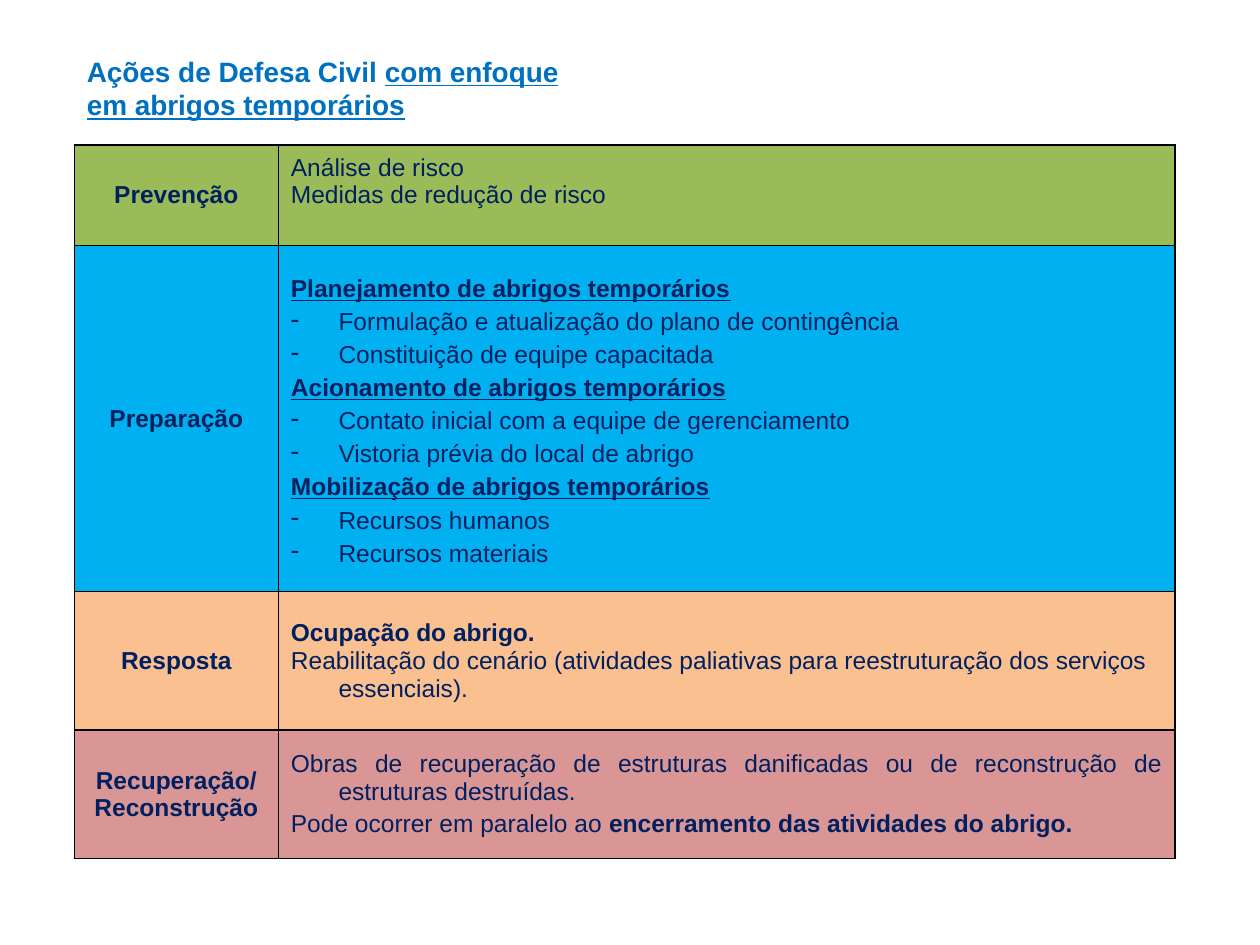
from lxml import etree
from pptx import Presentation, util as u
from pptx.dml.color import RGBColor
from pptx.enum import text
from pptx.oxml.ns import qn

FONT = "Arial"
NAVY, BLUE, BLACK = "002060", "0070C0", "000000"
HANG = u.Cm(0.96)
ALIGN = text.PP_ALIGN

# Content: a run is (words, style), with b for bold and u for underline
TITLE = [("Ações de Defesa Civil ", "b"),
         ("com enfoque em abrigos temporários", "bu")]

PLAN = [
    ("Planejamento de abrigos temporários",
     ["Formulação e atualização do plano de contingência",
      "Constituição de equipe capacitada"]),
    ("Acionamento de abrigos temporários",
     ["Contato inicial com a equipe de gerenciamento",
      "Vistoria prévia do local de abrigo"]),
    ("Mobilização de abrigos temporários",
     ["Recursos humanos", "Recursos materiais"]),
]
plan_paras = []
for heading, items in PLAN:
    plan_paras.append({"runs": [(heading, "bu")]})
    plan_paras += [{"runs": [(item, "")], "dash": True} for item in items]

PHASES = [
    {"name": ["Prevenção"], "fill": "9BBB59", "height": 2.03, "bottom": 0.67,
     "paras": [{"runs": [("Análise de risco", "")]},
               {"runs": [("Medidas de redução de risco", "")]}]},
    {"name": ["Preparação"], "fill": "00B0F0", "height": 6.98,
     "line": 1.2, "paras": plan_paras},
    {"name": ["Resposta"], "fill": "FAC090", "height": 2.79,
     "paras": [{"runs": [("Ocupação do abrigo.", "b")]},
               {"runs": [("Reabilitação do cenário (atividades paliativas para "
                          "reestruturação dos serviços essenciais).", "")]}]},
    {"name": ["Recuperação/", "Reconstrução"], "fill": "D99694", "height": 2.59,
     "align": ALIGN.JUSTIFY, "gap": 2.8,
     "paras": [{"runs": [("Obras de recuperação de estruturas danificadas ou de "
                          "reconstrução de estruturas destruídas.", "")]},
               {"runs": [("Pode ocorrer em paralelo ao ", ""),
                         ("encerramento das atividades do abrigo.", "b")]}]},
]
COLUMNS = [4.11, 18.08]


def color(value):
    return RGBColor.from_string(value)


def add_runs(para, runs, size, ink):
    for words, style in runs:
        span = para.add_run()
        span.text = words
        font = span.font
        font.name, font.size = FONT, u.Pt(size)
        font.bold, font.underline = "b" in style, "u" in style
        font.color.rgb = color(ink)


def set_hanging(para, dash):
    props = para._p.get_or_add_pPr()
    props.set("marL", str(HANG))
    props.set("indent", str(-HANG))
    if dash:
        etree.SubElement(props, qn("a:buChar"), char="-")
    else:
        etree.SubElement(props, qn("a:buNone"))


def fill_cell(cell, fill, paras, align, line=None, gap=0, bottom=None):
    cell.fill.solid()
    cell.fill.fore_color.rgb = color(fill)
    cell.vertical_anchor = text.MSO_ANCHOR.MIDDLE
    if bottom:
        cell.margin_bottom = u.Cm(bottom)
    for index, entry in enumerate(paras):
        frame = cell.text_frame
        para = frame.add_paragraph() if index else frame.paragraphs[0]
        set_hanging(para, entry.get("dash", False))
        para.alignment = align
        if line:
            para.line_spacing = line
        if gap and index:
            para.space_before = u.Pt(gap)
        add_runs(para, entry["runs"], 14, NAVY)


def set_borders(cell):
    props = cell._tc.get_or_add_tcPr()
    for index, side in enumerate(("lnL", "lnR", "lnT", "lnB")):
        edge = etree.Element(qn("a:" + side), w=str(u.Pt(1)))
        solid = etree.SubElement(edge, qn("a:solidFill"))
        etree.SubElement(solid, qn("a:srgbClr"), val=BLACK)
        props.insert(index, edge)


deck = Presentation()
deck.slide_width, deck.slide_height = u.Cm(25.4), u.Cm(19.05)
page = deck.slides.add_slide(deck.slide_layouts[6])

# Title
box = page.shapes.add_textbox(u.Cm(1.5), u.Cm(0.97), u.Cm(10.59), u.Cm(1.63))
box.text_frame.word_wrap = True
add_runs(box.text_frame.paragraphs[0], TITLE, 16, BLUE)

# Table of phases
table = page.shapes.add_table(
    len(PHASES), len(COLUMNS), u.Cm(1.5), u.Cm(2.92), u.Cm(sum(COLUMNS)),
    u.Cm(sum(phase["height"] for phase in PHASES))).table
table.first_row = table.horz_banding = False
for column, width in zip(table.columns, COLUMNS):
    column.width = u.Cm(width)

for row, phase in zip(table.rows, PHASES):
    row.height = u.Cm(phase["height"])
    name_cell, action_cell = row.cells
    names = [{"runs": [(words, "b")]} for words in phase["name"]]
    fill_cell(name_cell, phase["fill"], names, ALIGN.CENTER)
    fill_cell(action_cell, phase["fill"], phase["paras"],
              phase.get("align", ALIGN.LEFT), phase.get("line"),
              phase.get("gap", 0), phase.get("bottom"))
    for cell in (name_cell, action_cell):
        set_borders(cell)

deck.save("out.pptx")
